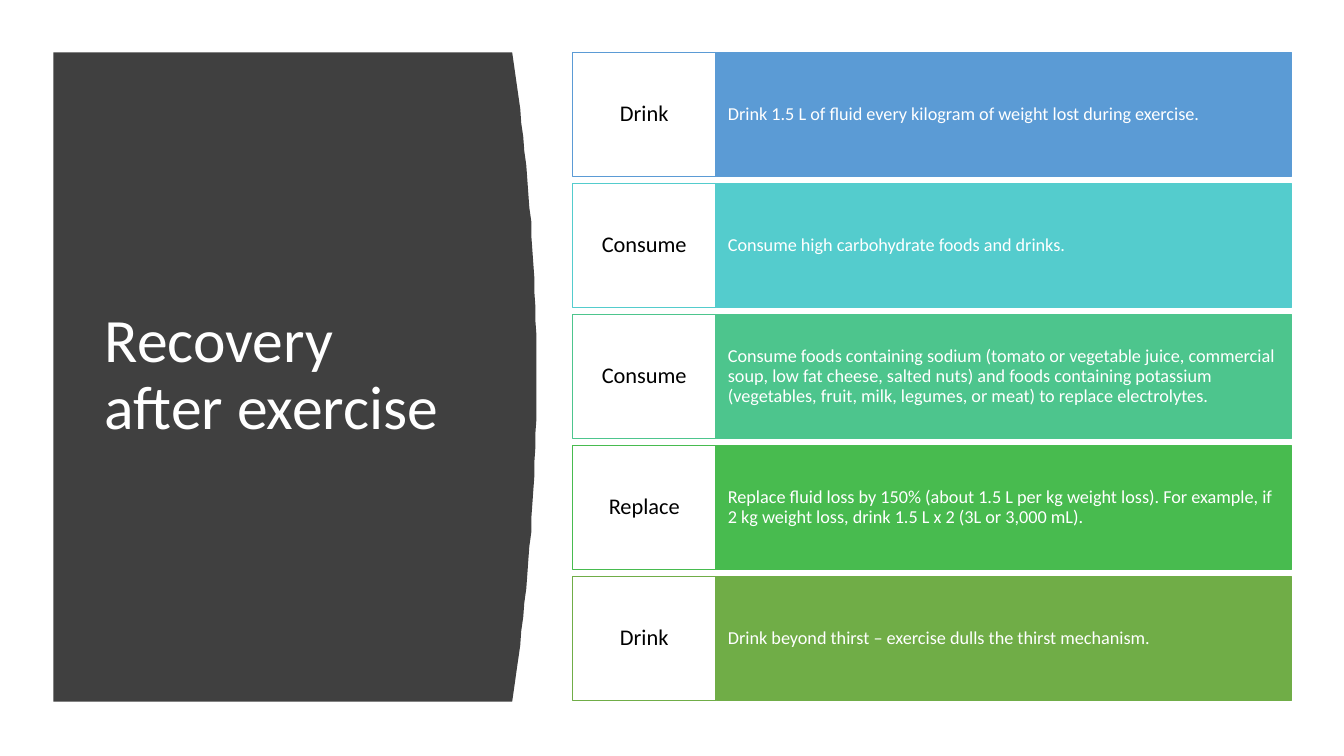
from pptx import Presentation
from pptx.dml.color import RGBColor
from pptx.enum.shapes import MSO_SHAPE
from pptx.enum.text import MSO_ANCHOR, PP_ALIGN
from pptx.util import Emu, Pt

RECT = MSO_SHAPE.RECTANGLE
MIDDLE = MSO_ANCHOR.MIDDLE
LEFT, CENTER = PP_ALIGN.LEFT, PP_ALIGN.CENTER
FONT = "Calibri"
WHITE, BLACK, DARK = "FFFFFF", "000000", "404040"

# Rows: label, advice, colour
ROWS = [
    ("Drink", "Drink 1.5 L of fluid every kilogram of weight lost during exercise.",
     "5B9BD5"),
    ("Consume", "Consume high carbohydrate foods and drinks.", "54CCCD"),
    ("Consume", "Consume foods containing sodium (tomato or vegetable juice, "
     "commercial soup, low fat cheese, salted nuts) and foods containing potassium "
     "(vegetables, fruit, milk, legumes, or meat) to replace electrolytes.", "4DC58D"),
    ("Replace", "Replace fluid loss by 150% (about 1.5 L per kg weight loss). "
     "For example, if 2 kg weight loss, drink 1.5 L x 2 (3L or 3,000 mL).", "48BB4F"),
    ("Drink", "Drink beyond thirst – exercise dulls the thirst mechanism.", "70AD47"),
]
TOP, BOTTOM = 52, 696
ROW_H, PITCH = 123, 130


def px(n):
    """100 px to the inch."""
    return Emu(n * 9144)


def paint(color, code):
    color.rgb = RGBColor.from_string(code)


def fill(shape, code):
    shape.shadow.inherit = False
    shape.fill.solid()
    paint(shape.fill.fore_color, code)


def write(shape, text, size, code, align, pad_x, pad_y):
    frame = shape.text_frame
    frame.word_wrap = True
    frame.vertical_anchor = MIDDLE
    frame.margin_left = frame.margin_right = px(pad_x)
    frame.margin_top = frame.margin_bottom = px(pad_y)
    para = frame.paragraphs[0]
    para.alignment = align
    para.line_spacing = 0.9
    run = para.add_run()
    run.text = text
    run.font.name = FONT
    run.font.size = Pt(size)
    paint(run.font.color, code)


def add_box(slide, x, y, w, back, edge):
    box = slide.shapes.add_shape(RECT, px(x), px(y), px(w), px(ROW_H))
    fill(box, back)
    paint(box.line.color, edge)
    box.line.width = Pt(1)
    return box


def add_panel(slide):
    # The right edge bulges as a parabola
    left, side, bulge = 53, 508, 24
    mid, half = (TOP + BOTTOM) / 2, (BOTTOM - TOP) / 2
    curve = [(side + bulge * (1 - ((y - mid) / half) ** 2), y)
             for y in range(TOP, BOTTOM + 1, 14)]
    pen = slide.shapes.build_freeform(left, TOP, scale=px(1))
    pen.add_line_segments(curve + [(left, BOTTOM)], close=True)
    panel = pen.convert_to_shape()
    fill(panel, DARK)
    panel.line.fill.background()


def add_title(slide):
    title = slide.shapes.add_textbox(px(94), px(111), px(374), px(524))
    write(title, "Recovery after exercise", 44, WHITE, LEFT, 10, 5)


def add_row(slide, y, label, advice, code):
    bar = add_box(slide, 711, y, 570, code, code)
    write(bar, advice, 13, WHITE, LEFT, 11, 31)
    tag = add_box(slide, 568, y, 142, WHITE, code)
    write(tag, label, 16, BLACK, CENTER, 8, 12)


def main():
    deck = Presentation()
    deck.slide_width, deck.slide_height = px(1333), px(750)
    slide = deck.slides.add_slide(deck.slide_layouts[6])

    # Left side
    add_panel(slide)
    add_title(slide)

    # Advice rows
    for i, row in enumerate(ROWS):
        add_row(slide, TOP + i * PITCH, *row)

    deck.save("out.pptx")


if __name__ == "__main__":
    main()
